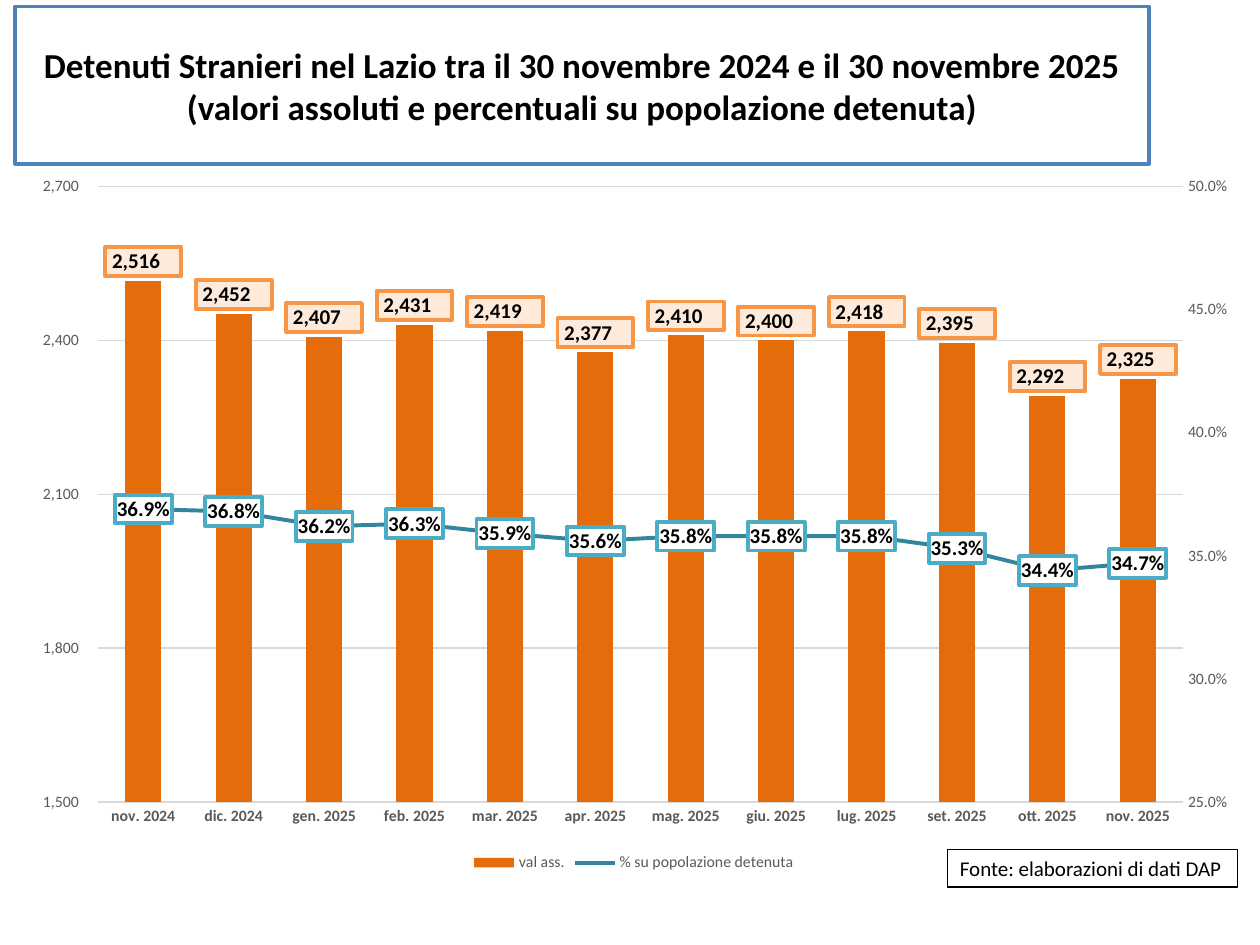
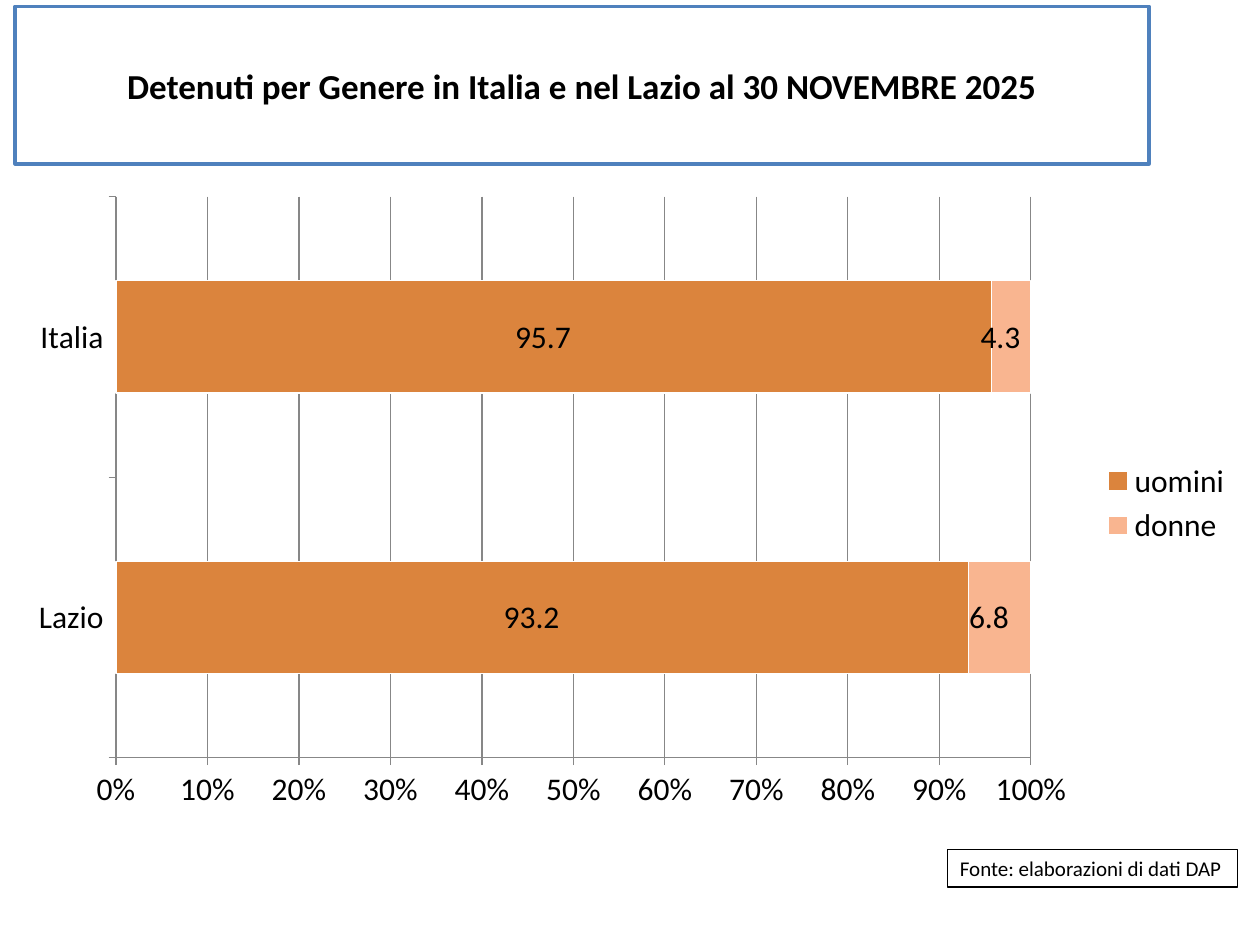
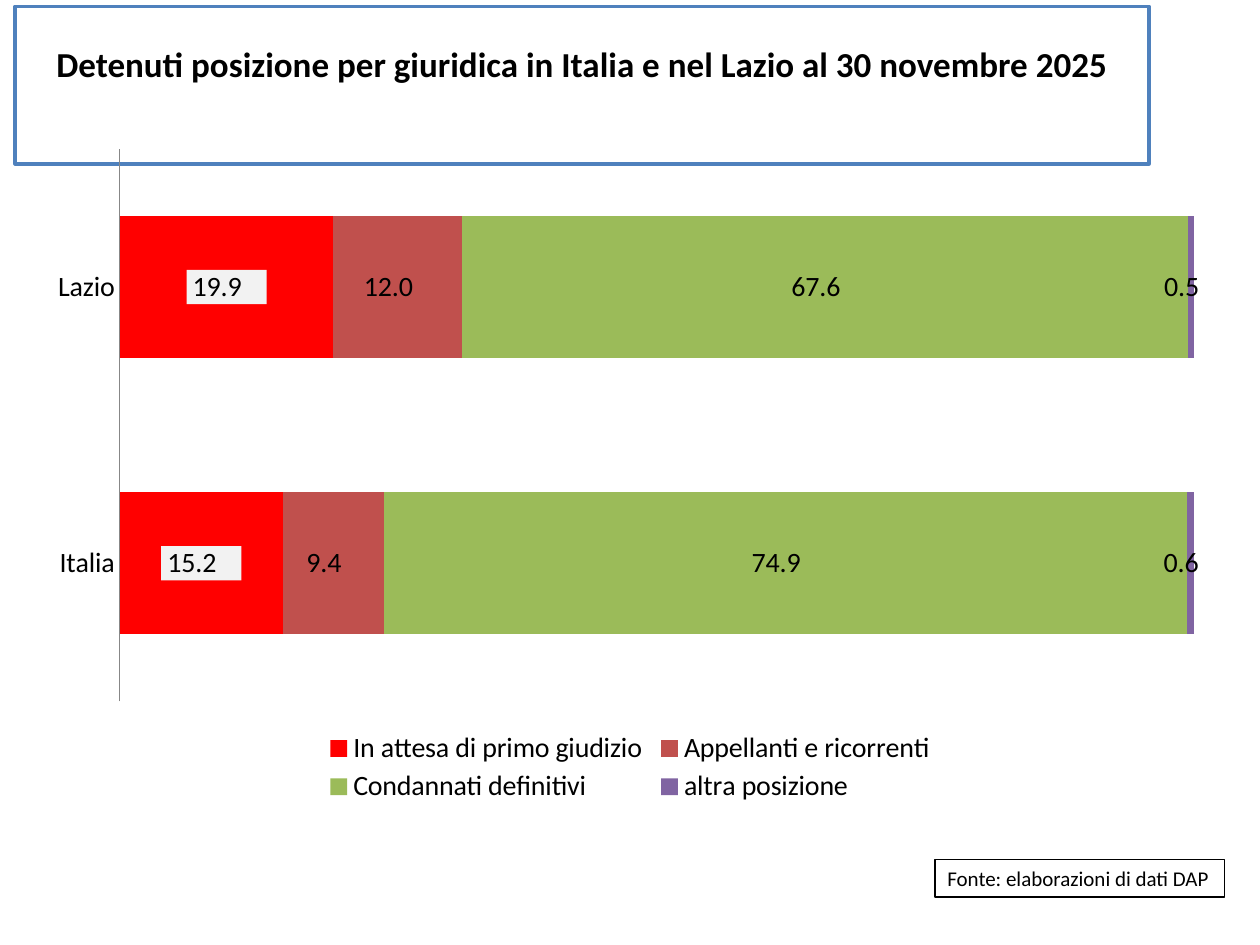
from copy import deepcopy
from dataclasses import dataclass
from typing import Optional

from lxml import etree
from pptx import Presentation
from pptx import util as u
from pptx.chart import axis as chart_axis
from pptx.chart.data import CategoryChartData
from pptx.dml.color import RGBColor
from pptx.enum import chart as charts, shapes, text
from pptx.oxml import parse_xml
from pptx.oxml.ns import nsdecls, qn

# Shared look
FONT = "Calibri"
COLORS = {
    "white": "FFFFFF", "black": "000000", "frame": "4F81BD",
    "grey_text": "595959", "grid": "D9D9D9", "axis": "878787",
    "orange": "E46C0A", "orange_edge": "F79646", "orange_pale": "FDEADA",
    "teal": "31859C", "teal_edge": "4BACC6",
    "men": "DB843D", "women": "F9B590",
    "red": "FF0000", "brick": "C0504D", "green": "9BBB59",
    "purple": "8064A2", "label_grey": "F2F2F2",
}
WHOLE = '_-* #,##0\\ _€_-;\\-* #,##0\\ _€_-;_-* "-"??\\ _€_-;_-@_-'
DECIMAL = WHOLE.replace("#,##0", "#,##0.0")
SOURCE = "Fonte: elaborazioni di dati DAP"

# The slide is a grid of 100 columns by 75 rows
SLIDE_WIDTH, SLIDE_HEIGHT = u.Inches(10), u.Inches(7.5)
COLUMN, ROW = SLIDE_WIDTH / 100, SLIDE_HEIGHT / 75


@dataclass
class Frame:
    left: float
    top: float
    width: float
    height: float

    def on_grid(self) -> tuple:
        return (u.Emu(int(self.left * COLUMN)), u.Emu(int(self.top * ROW)),
                u.Emu(int(self.width * COLUMN)), u.Emu(int(self.height * ROW)))


@dataclass
class Series:
    name: str
    values: tuple
    color: str
    label_fill: Optional[str] = None
    label_edge: Optional[str] = None
    edge: Optional[str] = None


@dataclass
class ChartSpec:
    kind: charts.XL_CHART_TYPE
    frame: Frame
    plot: Frame  # percent of the chart frame
    categories: list
    series: list
    font_size: float
    gap: int
    number_format: str
    legend: charts.XL_LEGEND_POSITION
    legend_box: Optional[Frame] = None  # percent of the chart frame


TITLE_FRAME = Frame(1.2, 0.5, 90, 12.5)
SOURCE_FRAME = Frame(75.2, 67.4, 23, 3)


def rgb(name: str) -> RGBColor:
    return RGBColor.from_string(COLORS[name])


def style_font(font, size: float, color: str = "black", bold: bool = False) -> None:
    font.name, font.size, font.bold = FONT, u.Pt(size), bold
    font.color.rgb = rgb(color)


def style_line(line, color: str, width: float) -> None:
    line.color.rgb = rgb(color)
    line.width = u.Pt(width)


# Boxes
def add_box(slide, frame: Frame, words: str, size: float, edge: str,
            edge_width: float, bold: bool = False):
    shape = slide.shapes.add_shape(shapes.MSO_SHAPE.RECTANGLE, *frame.on_grid())
    shape.shadow.inherit = False
    shape.fill.solid()
    shape.fill.fore_color.rgb = rgb("white")
    style_line(shape.line, edge, edge_width)
    shape.text_frame.text = words
    style_font(shape.text_frame.paragraphs[0].runs[0].font, size, bold=bold)
    return shape


def add_title(slide, words: str, bottom_rows: float = 0.5) -> None:
    shape = add_box(slide, TITLE_FRAME, words, 20, "frame", 2, bold=True)
    frame = shape.text_frame
    frame.word_wrap = True
    frame.vertical_anchor = text.MSO_ANCHOR.MIDDLE
    frame.margin_bottom = u.Emu(int(bottom_rows * ROW))
    frame.paragraphs[0].alignment = text.PP_ALIGN.CENTER


def add_source(slide, frame: Frame = SOURCE_FRAME) -> None:
    shape = add_box(slide, frame, SOURCE, 12, "black", 0.75)
    shape.text_frame.word_wrap = False
    shape.text_frame.auto_size = text.MSO_AUTO_SIZE.SHAPE_TO_FIT_TEXT
    shape.text_frame.paragraphs[0].alignment = text.PP_ALIGN.LEFT


# Chart parts
def layout_xml(box: Frame, inner: bool):
    target = '<c:layoutTarget val="inner"/>' if inner else ""
    places = {"x": box.left, "y": box.top, "w": box.width, "h": box.height}
    modes = "".join(f'<c:{key}Mode val="edge"/>' for key in "xy")
    sizes = "".join(f'<c:{key} val="{value / 100:.3f}"/>' for key, value in places.items())
    return parse_xml(f'<c:layout {nsdecls("c")}><c:manualLayout>{target}{modes}{sizes}'
                     "</c:manualLayout></c:layout>")


def place_plot(chart, box: Frame) -> None:
    plot_area = chart._chartSpace.chart.plotArea
    for layout in plot_area.findall(qn("c:layout")):
        plot_area.remove(layout)
    plot_area.insert(0, layout_xml(box, inner=True))


def clear_background(chart) -> None:
    chart._chartSpace.chart.addnext(parse_xml(
        f'<c:spPr {nsdecls("c", "a")}><a:noFill/><a:ln><a:noFill/></a:ln></c:spPr>'))


def add_labels(series, spec: Series, number_format: str, size: float,
               position=None, bold: bool = False) -> None:
    labels = series.data_labels
    labels.show_value = True
    labels.number_format, labels.number_format_is_linked = number_format, False
    if position is not None:
        labels.position = position
    style_font(labels.font, size, bold=bold)
    if spec.label_fill:
        edge = "<a:ln><a:noFill/></a:ln>"
        if spec.label_edge:
            edge = (f'<a:ln w="{u.Pt(2.25)}"><a:solidFill><a:srgbClr '
                    f'val="{COLORS[spec.label_edge]}"/></a:solidFill></a:ln>')
        box = parse_xml(f'<c:spPr {nsdecls("c", "a")}><a:solidFill><a:srgbClr '
                        f'val="{COLORS[spec.label_fill]}"/></a:solidFill>{edge}</c:spPr>')
        labels._element.find(qn("c:numFmt")).addnext(box)


def set_ticks(axis, mark) -> None:
    axis.major_tick_mark = mark
    axis.minor_tick_mark = charts.XL_TICK_MARK.NONE


def add_chart(slide, spec: ChartSpec):
    data = CategoryChartData(number_format=spec.number_format)
    data.categories = spec.categories
    for series in spec.series:
        data.add_series(series.name, series.values)
    chart = slide.shapes.add_chart(spec.kind, *spec.frame.on_grid(), data).chart
    chart.has_title = False
    style_font(chart.font, spec.font_size)
    clear_background(chart)
    place_plot(chart, spec.plot)
    plot = chart.plots[0]
    plot.vary_by_categories = False
    plot.gap_width = spec.gap
    for series, series_spec in zip(plot.series, spec.series):
        series.format.fill.solid()
        series.format.fill.fore_color.rgb = rgb(series_spec.color)
        if series_spec.edge:
            style_line(series.format.line, series_spec.edge, 0.75)
    chart.has_legend = True
    chart.legend.position = spec.legend
    chart.legend.include_in_layout = False
    style_font(chart.legend.font, spec.font_size)
    if spec.legend_box:
        position = chart.legend._element.find(qn("c:legendPos"))
        position.addnext(layout_xml(spec.legend_box, inner=False))
    return chart


def add_share_bars(slide, spec: ChartSpec):
    chart = add_chart(slide, spec)
    chart.plots[0].overlap = 100
    for series, series_spec in zip(chart.plots[0].series, spec.series):
        add_labels(series, series_spec, spec.number_format, spec.font_size,
                   charts.XL_LABEL_POSITION.CENTER)
    style_line(chart.category_axis.format.line, "axis", 0.75)
    return chart


def move_last_series_to_line(chart) -> chart_axis.ValueAxis:
    """Draw the last series as a line against a new right axis."""
    plot_area = chart._chartSpace.chart.plotArea
    bars = plot_area.find(qn("c:barChart"))
    moved = bars.findall(qn("c:ser"))[-1]
    for tag in ("c:invertIfNegative", "c:spPr"):
        for element in moved.findall(qn(tag)):
            moved.remove(element)
    line_chart = parse_xml(
        f'<c:lineChart {nsdecls("c")}><c:grouping val="standard"/><c:varyColors val="0"/>'
        '<c:marker val="1"/><c:axId val="5001"/><c:axId val="5002"/></c:lineChart>')
    line_chart.insert(2, moved)
    bars.addnext(line_chart)

    category = deepcopy(chart.category_axis._element)
    value = deepcopy(chart.value_axis._element)
    chart.value_axis._element.addnext(value)
    value.addnext(category)
    for element, own, other in ((category, "5001", "5002"), (value, "5002", "5001")):
        element.find(qn("c:axId")).set("val", own)
        element.find(qn("c:crossAx")).set("val", other)
    category.find(qn("c:delete")).set("val", "1")
    value.find(qn("c:axPos")).set("val", "r")
    value.find(qn("c:crosses")).set("val", "max")
    return chart_axis.ValueAxis(value)


# Slides
def foreigners_slide(slide) -> None:
    add_title(slide, "Detenuti Stranieri nel Lazio tra il 30 novembre 2024 e il 30 novembre "
                     "2025 (valori assoluti e percentuali su popolazione detenuta)")
    add_source(slide)
    months = "gen. feb. mar. apr. mag. giu. lug. set. ott. nov.".split()
    spec = ChartSpec(
        charts.XL_CHART_TYPE.COLUMN_CLUSTERED, Frame(1.2, 13, 98.2, 56.6),
        Frame(6.7, 3.2, 87.7, 86.3),
        ["nov. 2024", "dic. 2024"] + [f"{month} 2025" for month in months],
        [Series("val ass.", (2516, 2452, 2407, 2431, 2419, 2377,
                             2410, 2400, 2418, 2395, 2292, 2325),
                "orange", "orange_pale", "orange_edge"),
         Series("% su popolazione detenuta",
                (0.369, 0.368, 0.362, 0.363, 0.359, 0.356,
                 0.358, 0.358, 0.358, 0.353, 0.344, 0.347),
                "teal", "white", "teal_edge")],
        10, 150, WHOLE, charts.XL_LEGEND_POSITION.BOTTOM)
    chart = add_chart(slide, spec)
    style_font(chart.legend.font, 9, "grey_text")

    months_axis, count_axis = chart.category_axis, chart.value_axis
    for axis in (months_axis, count_axis):
        set_ticks(axis, charts.XL_TICK_MARK.NONE)
        style_font(axis.tick_labels.font, 9, "grey_text", bold=axis is months_axis)
    style_line(months_axis.format.line, "grid", 0.75)
    count_axis.format.line.fill.background()
    count_axis.minimum_scale, count_axis.maximum_scale = 1500, 2700
    count_axis.major_unit = 300
    style_line(count_axis.major_gridlines.format.line, "grid", 0.75)
    count_axis.tick_labels.number_format = WHOLE
    count_axis.tick_labels.number_format_is_linked = False

    share_axis = move_last_series_to_line(chart)
    share_axis.has_major_gridlines = False
    share_axis.minimum_scale, share_axis.maximum_scale = 0.25, 0.5
    share_axis.major_unit = 0.05
    share_axis.tick_labels.number_format = "0.0%"

    counts, shares = chart.plots[0].series[0], chart.plots[1].series[0]
    style_line(shares.format.line, "teal", 2.25)
    shares.marker.style = charts.XL_MARKER_STYLE.NONE
    shares.smooth = False
    add_labels(counts, spec.series[0], WHOLE, 12,
               charts.XL_LABEL_POSITION.OUTSIDE_END, bold=True)
    add_labels(shares, spec.series[1], "0.0%", 12,
               charts.XL_LABEL_POSITION.CENTER, bold=True)


def gender_slide(slide) -> None:
    add_title(slide, "Detenuti per Genere in Italia e nel Lazio al 30 NOVEMBRE 2025")
    add_source(slide)
    chart = add_share_bars(slide, ChartSpec(
        charts.XL_CHART_TYPE.BAR_STACKED_100, Frame(1.2, 14.7, 97.6, 50.5),
        Frame(8.2, 1.8, 74.4, 88.2), ["Lazio", "Italia"],
        [Series("uomini", (93.2, 95.7), "men", edge="white"),
         Series("donne", (6.8, 4.3), "women", edge="white")],
        18, 150, DECIMAL, charts.XL_LEGEND_POSITION.RIGHT))
    share_axis = chart.value_axis
    for axis in (chart.category_axis, share_axis):
        set_ticks(axis, charts.XL_TICK_MARK.OUTSIDE)
    share_axis.minimum_scale = 0
    share_axis.tick_labels.number_format = "0%"
    share_axis.tick_labels.number_format_is_linked = False
    for part in (share_axis, share_axis.major_gridlines):
        style_line(part.format.line, "axis", 0.75)


def legal_position_slide(slide) -> None:
    add_title(slide, "Detenuti posizione per giuridica in Italia e nel Lazio "
                     "al 30 novembre 2025", bottom_rows=3.9)
    add_source(slide, Frame(74.2, 68.2, 23, 3))
    chart = add_share_bars(slide, ChartSpec(
        charts.XL_CHART_TYPE.BAR_STACKED_100, Frame(2.8, 10.8, 94.4, 53.5),
        Frame(7.1, 1.9, 90.3, 82), ["Lazio", "Italia"],
        [Series("In attesa di primo giudizio", (19.9, 15.2), "red", "label_grey"),
         Series("Appellanti e ricorrenti", (12, 9.4), "brick"),
         Series("Condannati definitivi", (67.6, 74.9), "green"),
         Series("altra posizione", (0.5, 0.6), "purple")],
        16, 95, DECIMAL, charts.XL_LEGEND_POSITION.BOTTOM, Frame(24, 87.7, 52, 12)))
    set_ticks(chart.category_axis, charts.XL_TICK_MARK.NONE)
    chart.category_axis.reverse_order = True
    chart.value_axis.has_major_gridlines = False
    chart.value_axis.visible = False


def main() -> None:
    presentation = Presentation()
    presentation.slide_width, presentation.slide_height = SLIDE_WIDTH, SLIDE_HEIGHT
    blank = presentation.slide_layouts[6]
    for build in (foreigners_slide, gender_slide, legal_position_slide):
        build(presentation.slides.add_slide(blank))
    presentation.save("out.pptx")


if __name__ == "__main__":
    main()
